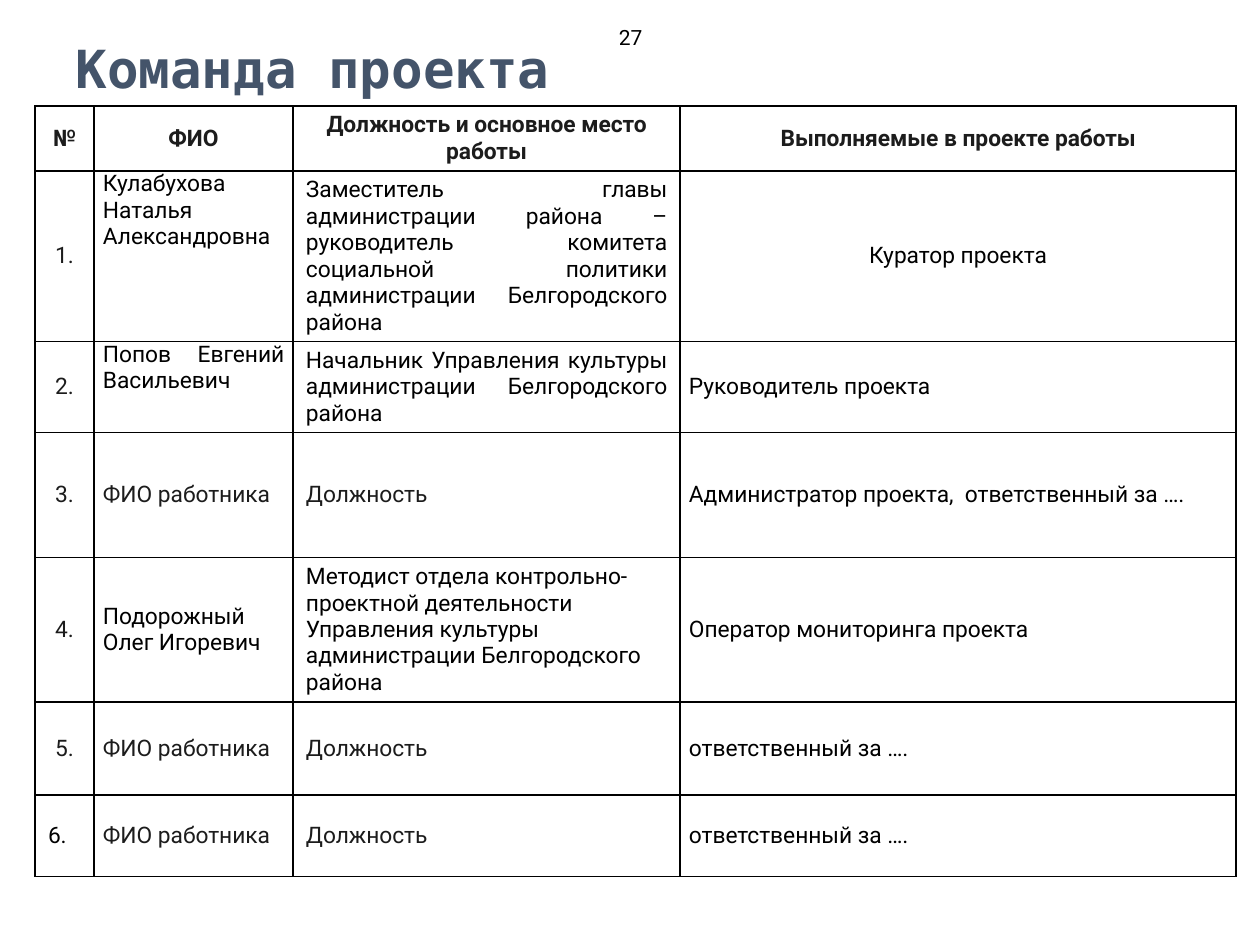
from dataclasses import dataclass

from lxml.etree import SubElement
from pptx import Presentation
from pptx.dml.color import RGBColor
from pptx.enum.text import MSO_ANCHOR, MSO_AUTO_SIZE, PP_ALIGN
from pptx.oxml.ns import qn
from pptx.util import Emu, Pt

PX = 914400 // 126
FONT, TITLE_FONT = "Roboto", "DejaVu Sans Mono"
BLACK, DARK, SLATE = "000000", "1C1C1C", "44546A"
LEFT, CENTER = PP_ALIGN.LEFT, PP_ALIGN.CENTER
RIGHT, JUSTIFY = PP_ALIGN.RIGHT, PP_ALIGN.JUSTIFY
WIDE = (13, 6)  # horizontal and vertical cell margins
TIGHT = (9, 0)


@dataclass
class Entry:
    text: str
    align: PP_ALIGN = LEFT
    color: str = BLACK
    bold: bool = False
    margins: tuple[int, int] = WIDE
    anchor: MSO_ANCHOR = MSO_ANCHOR.MIDDLE


def px(n: int) -> Emu:
    return Emu(n * PX)


def rgb(color: str) -> RGBColor:
    return RGBColor.from_string(color)


def place(sp, x: int, y: int, w: int, h: int) -> None:
    sp.left, sp.top, sp.width, sp.height = px(x), px(y), px(w), px(h)


def write(tf, text: str, size: int, color: str, align: PP_ALIGN,
          font: str = FONT, bold: bool = False) -> None:
    p = tf.paragraphs[0]
    p.alignment = align
    r = p.add_run()
    r.text = text
    r.font.name, r.font.size, r.font.bold = font, Pt(size), bold
    r.font.color.rgb = rgb(color)


def add_borders(cell, color: str, width: int) -> None:
    tc_pr = cell._tc.get_or_add_tcPr()
    for side in ("a:lnL", "a:lnR", "a:lnT", "a:lnB"):
        ln = SubElement(tc_pr, qn(side), w=str(Pt(width)))
        fill = SubElement(ln, qn("a:solidFill"))
        SubElement(fill, qn("a:srgbClr"), val=color)


def fill_cell(cell, e: Entry) -> None:
    add_borders(cell, BLACK, 1)
    cell.fill.background()
    cell.vertical_anchor = e.anchor
    cell.margin_left = cell.margin_right = px(e.margins[0])
    cell.margin_top = cell.margin_bottom = px(e.margins[1])
    write(cell.text_frame, e.text, 13, e.color, e.align, bold=e.bold)


def header(text: str) -> Entry:
    return Entry(text, CENTER, DARK, bold=True)


def number(n: int) -> Entry:
    return Entry(f"{n}.", CENTER, DARK)


def person(text: str) -> Entry:
    return Entry(text, JUSTIFY, margins=TIGHT, anchor=MSO_ANCHOR.TOP)


def blank_name() -> Entry:
    return Entry("ФИО работника", color=DARK, margins=TIGHT)


def blank_post() -> Entry:
    return Entry("Должность", JUSTIFY, DARK)


def duty(text: str, align: PP_ALIGN = LEFT) -> Entry:
    return Entry(text, align, margins=TIGHT)


COLS = [59, 199, 387, 556]
ROWS = [35, 134, 82, 125, 91, 93, 82]  # minimum heights, rows grow with text
TEAM = [
    [header(t) for t in ("№", "ФИО", "Должность и основное место работы",
                         "Выполняемые в проекте работы")],
    [number(1), person("Кулабухова Наталья Александровна"),
     Entry("Заместитель главы администрации района – руководитель комитета "
           "социальной политики администрации Белгородского района", JUSTIFY),
     duty("Куратор проекта", CENTER)],
    [number(2), person("Попов Евгений Васильевич"),
     Entry("Начальник Управления культуры администрации Белгородского района",
           JUSTIFY),
     duty("Руководитель проекта")],
    [number(3), blank_name(), blank_post(),
     duty("Администратор проекта,  ответственный за ….", JUSTIFY)],
    [number(4), Entry("Подорожный Олег Игоревич", margins=TIGHT),
     Entry("Методист отдела контрольно- проектной деятельности Управления "
           "культуры администрации Белгородского района"),
     duty("Оператор мониторинга проекта")],
    [number(5), blank_name(), blank_post(),
     duty("ответственный за ….", JUSTIFY)],
    [Entry("6."), blank_name(), blank_post(),
     duty("ответственный за ….", JUSTIFY)],
]


def add_team_table(s) -> None:
    frame = s.shapes.add_table(len(ROWS), len(COLS), px(35), px(106),
                               px(sum(COLS)), px(sum(ROWS)))
    table = frame.table
    table.first_row = table.horz_banding = False
    for col, w in zip(table.columns, COLS):
        col.width = px(w)
    for row, h, entries in zip(table.rows, ROWS, TEAM):
        row.height = px(h)
        for cell, entry in zip(row.cells, entries):
            fill_cell(cell, entry)
    frame.height = px(789)


def main() -> None:
    prs = Presentation()
    prs.slide_width, prs.slide_height = px(1260), px(945)
    s = prs.slides.add_slide(prs.slide_layouts[5])

    # Title
    title = s.shapes.title
    place(title, 63, 0, 1134, 135)
    tf = title.text_frame
    tf.auto_size = MSO_AUTO_SIZE.NONE
    tf.vertical_anchor = MSO_ANCHOR.MIDDLE
    write(tf, "Команда проекта", 30, SLATE, LEFT, TITLE_FONT, True)

    # Team table
    add_team_table(s)

    # Page number
    page = s.shapes.add_textbox(px(605), px(6), px(50), px(50))
    tf = page.text_frame
    tf.word_wrap = True
    tf.margin_left = 0
    tf.vertical_anchor = MSO_ANCHOR.BOTTOM
    write(tf, "27", 12, BLACK, RIGHT)

    prs.save("out.pptx")


if __name__ == "__main__":
    main()
